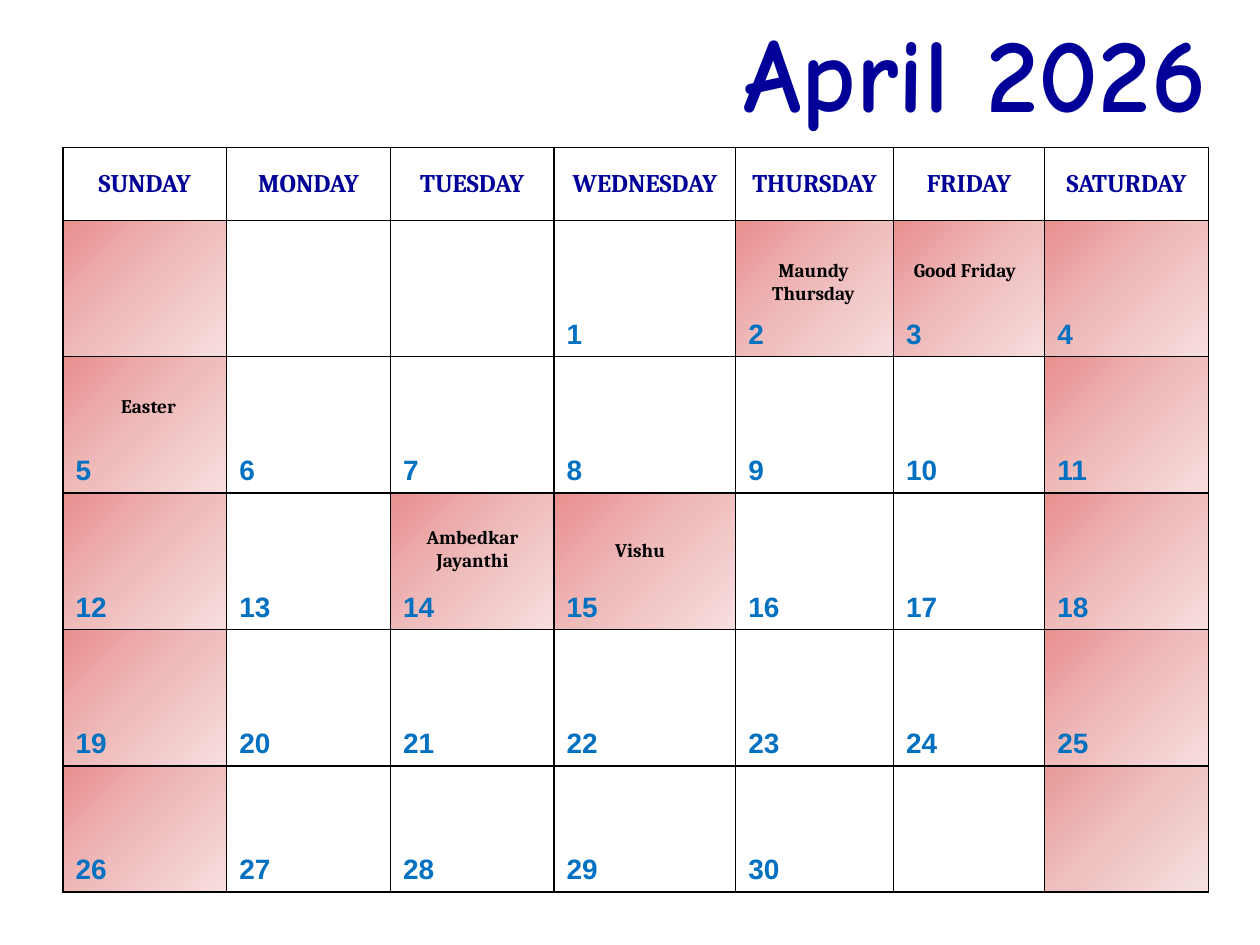
from typing import NamedTuple

from lxml.etree import SubElement
from pptx import Presentation
from pptx.dml.color import RGBColor
from pptx.enum.text import MSO_ANCHOR, MSO_AUTO_SIZE, PP_ALIGN
from pptx.oxml.ns import qn
from pptx.util import Cm, Pt


class TextStyle(NamedTuple):
    font: str
    size: float
    color: str
    alignment: PP_ALIGN


class Label(NamedTuple):
    text: str
    left: float
    top: float
    width: float
    height: float
    style: TextStyle


TITLE = TextStyle("Comic Neue", 60, "000099", PP_ALIGN.RIGHT)
WEEKDAY = TextStyle("Cambria", 14.5, "000099", PP_ALIGN.CENTER)
DAY = TextStyle("Arial", 16, "0070C0", PP_ALIGN.LEFT)
HOLIDAY = TextStyle("Cambria", 11, "000000", PP_ALIGN.CENTER)

WEEKDAYS = ["SUNDAY", "MONDAY", "TUESDAY", "WEDNESDAY", "THURSDAY", "FRIDAY", "SATURDAY"]
COLUMN_WIDTHS = [3.3, 3.3, 3.3, 3.66, 3.18, 3.05, 3.3]
ROW_HEIGHTS = [1.47, 2.75, 2.75, 2.75, 2.75, 2.54]
FIRST_DAY_COLUMN = 3
DAYS_IN_MONTH = 30
HOLIDAYS = {2, 3, 14, 15}
ROSE = ["E98F8F", "EFBCBC", "F7DEDE"]
SOFT_ROSE = ["E79A99", "EEC2C1", "F6E1E1"]

LABELS = [
    Label("April 2026", 10.54, 0.03, 14.02, 2.82, TITLE),
    Label("Maundy Thursday", 14.81, 5.08, 3.18, 1.19, HOLIDAY),
    Label("Good Friday", 17.55, 5.08, 3.81, 0.74, HOLIDAY),
    Label("Easter", 1.09, 7.82, 3.81, 0.74, HOLIDAY),
    Label("Ambedkar Jayanthi", 7.62, 10.46, 3.81, 1.19, HOLIDAY),
    Label("Vishu", 11, 10.72, 3.81, 0.74, HOLIDAY),
]


def rgb(color: str) -> RGBColor:
    return RGBColor.from_string(color)


def write(text_frame, text: str, style: TextStyle) -> None:
    paragraph = text_frame.paragraphs[0]
    paragraph.alignment = style.alignment
    run = paragraph.add_run()
    run.text = text
    run.font.name = style.font
    run.font.size = Pt(style.size)
    run.font.bold = True
    run.font.color.rgb = rgb(style.color)


def add_color(parent, color: str) -> None:
    SubElement(parent, qn("a:srgbClr"), val=color)


def add_borders(cell) -> None:
    properties = cell._tc.get_or_add_tcPr()
    for side in ("a:lnL", "a:lnR", "a:lnT", "a:lnB"):
        line = SubElement(properties, qn(side), w=str(Pt(1)))
        add_color(SubElement(line, qn("a:solidFill")), "000000")


def fill_gradient(cell, colors: list[str]) -> None:
    gradient = SubElement(cell._tc.get_or_add_tcPr(), qn("a:gradFill"))
    stops = SubElement(gradient, qn("a:gsLst"))
    for position, color in zip((0, 50000, 100000), colors):
        add_color(SubElement(stops, qn("a:gs"), pos=str(position)), color)
    SubElement(gradient, qn("a:lin"), ang=str(45 * 60000), scaled="0")


def fill_day(cell, week: int, column: int) -> None:
    day = week * len(WEEKDAYS) + column - FIRST_DAY_COLUMN + 1
    cell.vertical_anchor = MSO_ANCHOR.BOTTOM
    if 1 <= day <= DAYS_IN_MONTH:
        write(cell.text_frame, str(day), DAY)
    if day > DAYS_IN_MONTH and column == 6:
        fill_gradient(cell, SOFT_ROSE)
    elif column in (0, 6) or day in HOLIDAYS:
        fill_gradient(cell, ROSE)
    else:
        cell.fill.solid()
        cell.fill.fore_color.rgb = rgb("FFFFFF")


def add_calendar(slide) -> None:
    table = slide.shapes.add_table(
        len(ROW_HEIGHTS), len(COLUMN_WIDTHS), Cm(1.27), Cm(2.97),
        Cm(sum(COLUMN_WIDTHS)), Cm(sum(ROW_HEIGHTS)),
    ).table
    table.first_row = False
    table.horz_banding = False
    for column, width in zip(table.columns, COLUMN_WIDTHS):
        column.width = Cm(width)
    for row, height in zip(table.rows, ROW_HEIGHTS):
        row.height = Cm(height)
    for cell in table.iter_cells():
        add_borders(cell)
    for column, weekday in enumerate(WEEKDAYS):
        header = table.cell(0, column)
        header.vertical_anchor = MSO_ANCHOR.MIDDLE
        header.fill.solid()
        header.fill.fore_color.rgb = rgb("FFFFFF")
        write(header.text_frame, weekday, WEEKDAY)
        for week in range(len(ROW_HEIGHTS) - 1):
            fill_day(table.cell(week + 1, column), week, column)


def add_label(slide, label: Label) -> None:
    shape = slide.shapes.add_textbox(
        Cm(label.left), Cm(label.top), Cm(label.width), Cm(label.height)
    )
    shape.text_frame.word_wrap = True
    shape.text_frame.auto_size = MSO_AUTO_SIZE.SHAPE_TO_FIT_TEXT
    write(shape.text_frame, label.text, label.style)


def main() -> None:
    presentation = Presentation()
    presentation.slide_width = Cm(25.4)
    presentation.slide_height = Cm(19.05)
    slide = presentation.slides.add_slide(presentation.slide_layouts[6])
    add_calendar(slide)
    for label in LABELS:
        add_label(slide, label)
    presentation.save("out.pptx")


if __name__ == "__main__":
    main()
